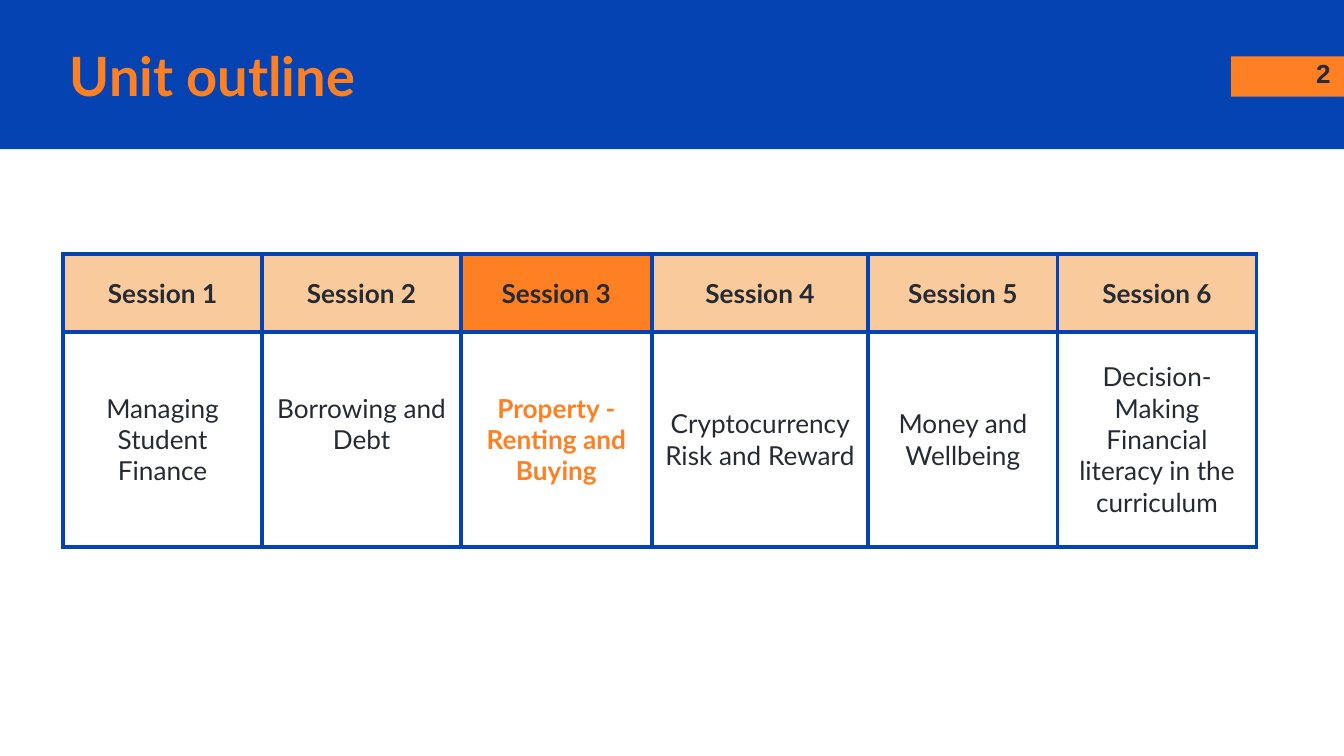
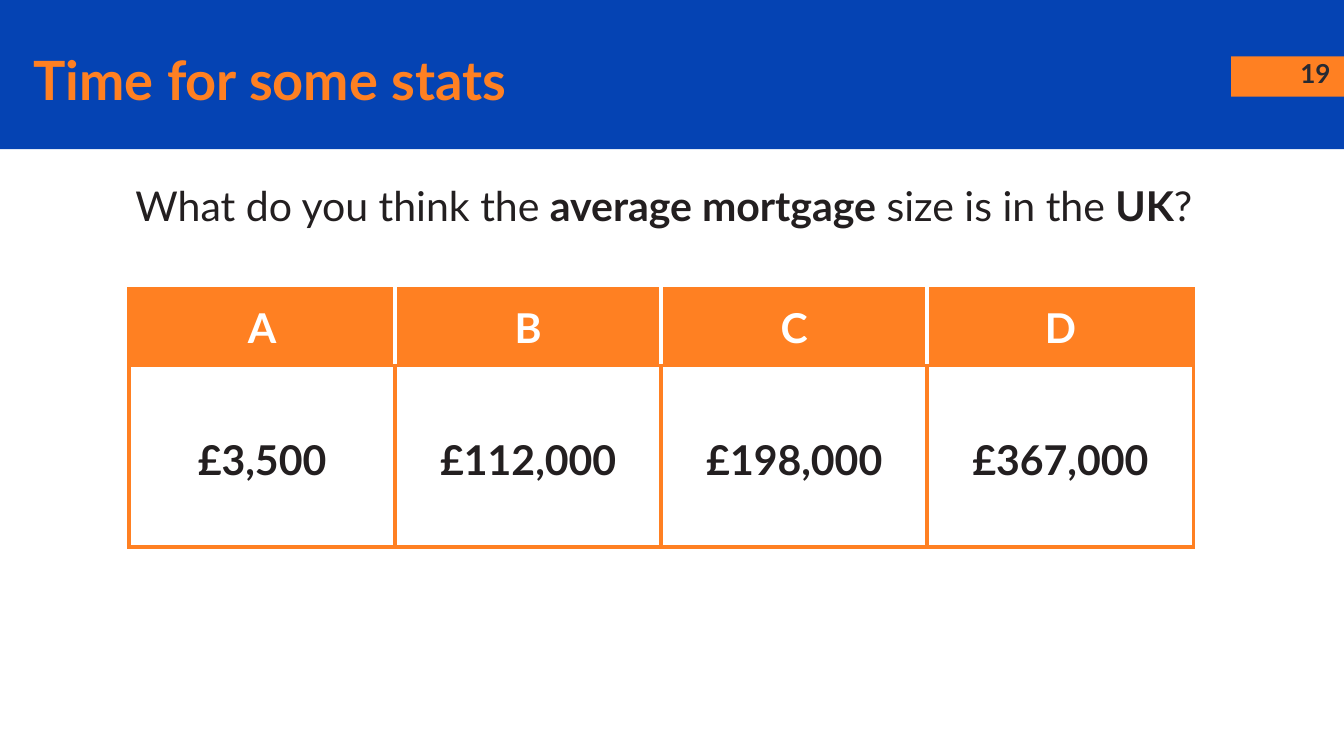
from dataclasses import dataclass

from lxml import etree
from pptx import Presentation
from pptx.dml.color import RGBColor
from pptx.enum.shapes import MSO_SHAPE
from pptx.enum.text import MSO_ANCHOR, MSO_AUTO_SIZE, PP_ALIGN
from pptx.oxml.ns import qn
from pptx.util import Inches, Pt

LEFT, CENTER, RIGHT = PP_ALIGN.LEFT, PP_ALIGN.CENTER, PP_ALIGN.RIGHT
TOP, MIDDLE = MSO_ANCHOR.TOP, MSO_ANCHOR.MIDDLE
RECT = MSO_SHAPE.RECTANGLE
TITLE_ONLY = 5


@dataclass(frozen=True)
class Theme:
    blue: str = "0543B3"
    orange: str = "FF8022"
    peach: str = "F9CB9C"
    white: str = "FFFFFF"
    dark: str = "262A33"
    ink: str = "231F20"
    font: str = "Lato"
    number_font: str = "Arial"
    title: int = 29
    large: int = 22
    body: int = 14
    border: float = 2.25
    inset: float = 0.1
    side_inset: float = 0.09


T = Theme()
WIDTH = 10
HEIGHT = WIDTH * 9 / 16

SESSIONS = [
    ("Session 1", ["Managing Student Finance"]),
    ("Session 2", ["Borrowing and Debt"]),
    ("Session 3", ["Property - Renting and Buying"]),
    ("Session 4", ["Cryptocurrency Risk and Reward"]),
    ("Session 5", ["Money and Wellbeing"]),
    ("Session 6", ["Decision- Making", "Financial literacy in the curriculum"]),
]
SESSION_COLS = [1.48, 1.48, 1.42, 1.61, 1.41, 1.48]
SESSION_ROWS = [0.58, 1.6]
CURRENT, RAISED = 2, 1
RAISE = 0.23

# Each part of the question is (text, bold)
QUESTION = [
    ("What do you think the ", False),
    ("average mortgage", True),
    (" size is in the ", False),
    ("UK", True),
    ("?", False),
]
ANSWERS = [("A", "£3,500"), ("B", "£112,000"), ("C", "£198,000"), ("D", "£367,000")]
ANSWER_COL = 1.98
ANSWER_ROWS = [0.57, 1.35]


def write(tf, paragraphs, size=T.body, color=T.dark, font=T.font, bold=False,
          align=LEFT, spacing=None):
    """Fill a text frame; a paragraph is a string or a list of (text, bold) parts."""
    for i, content in enumerate(paragraphs):
        p = tf.paragraphs[0] if i == 0 else tf.add_paragraph()
        p.alignment = align
        if spacing:
            p.line_spacing = spacing
        parts = [(content, bold)] if isinstance(content, str) else content
        for text, is_bold in parts:
            r = p.add_run()
            r.text = text
            r.font.name, r.font.size, r.font.bold = font, Pt(size), is_bold
            r.font.color.rgb = RGBColor.from_string(color)


def frame(sp, anchor=TOP):
    tf = sp.text_frame
    tf.word_wrap = True
    tf.auto_size = MSO_AUTO_SIZE.NONE
    tf.vertical_anchor = anchor
    tf.margin_left = tf.margin_right = Inches(T.inset)
    tf.margin_top = tf.margin_bottom = Inches(T.inset)
    return tf


def add_text(s, box, paragraphs, **fmt):
    write(frame(s.shapes.add_textbox(*map(Inches, box))), paragraphs, **fmt)


def add_block(s, box, color):
    sp = s.shapes.add_shape(RECT, *map(Inches, box))
    sp.shadow.inherit = False
    sp.fill.solid()
    sp.fill.fore_color.rgb = RGBColor.from_string(color)
    sp.line.fill.background()


def add_slide(prs, title, title_box, number, number_font=T.font):
    s = prs.slides.add_slide(prs.slide_layouts[TITLE_ONLY])
    add_block(s, (0, 0, WIDTH, 1.11), T.blue)
    add_block(s, (9.16, 0.42, 0.84, 0.3), T.orange)
    add_text(s, (9.4, 0.33, 0.6, 0.43), [number], font=number_font, bold=True, align=RIGHT)
    sp = s.shapes.title
    sp.left, sp.top, sp.width, sp.height = map(Inches, title_box)
    write(frame(sp, MIDDLE), [title], size=T.title, color=T.orange, bold=True)
    s.shapes._spTree.append(sp._element)  # title in front of the band
    return s


def set_borders(cell, color, **sides):
    """Draw all four borders in one colour; sides such as L=... override it."""
    tc_pr = cell._tc.get_or_add_tcPr()
    for i, side in enumerate("LRTB"):
        ln = etree.Element(qn(f"a:ln{side}"), w=str(Pt(T.border)))
        fill = etree.SubElement(ln, qn("a:solidFill"))
        etree.SubElement(fill, qn("a:srgbClr"), val=sides.get(side, color))
        tc_pr.insert(i, ln)


def add_table(s, left, top, cols, rows):
    table = s.shapes.add_table(len(rows), len(cols), Inches(left), Inches(top),
                               Inches(sum(cols)), Inches(sum(rows))).table
    table.first_row = table.horz_banding = False
    for col, width in zip(table.columns, cols):
        col.width = Inches(width)
    for row, height in zip(table.rows, rows):
        row.height = Inches(height)
    return table


def fill_cell(cell, paragraphs, fill, **fmt):
    cell.fill.solid()
    cell.fill.fore_color.rgb = RGBColor.from_string(fill)
    cell.vertical_anchor = MIDDLE
    cell.margin_left = cell.margin_right = Inches(T.side_inset)
    cell.margin_top = cell.margin_bottom = Inches(T.inset)
    write(cell.text_frame, paragraphs, align=CENTER, **fmt)


def build_outline(prs):
    s = add_slide(prs, "Unit outline", (0.42, 0.28, 8.46, 0.56), "2", T.number_font)
    table = add_table(s, 0.47, 1.89, SESSION_COLS, SESSION_ROWS)
    for c, (session, topic) in enumerate(SESSIONS):
        current = c == CURRENT
        head, body = table.cell(0, c), table.cell(1, c)
        fill_cell(head, [session], T.orange if current else T.peach, bold=True)
        fill_cell(body, topic, T.white, bold=current,
                  color=T.orange if current else T.dark)
        for cell in (head, body):
            set_borders(cell, T.blue)
    table.cell(1, RAISED).margin_bottom = Inches(T.inset + RAISE)


def build_stats(prs):
    s = add_slide(prs, "Time for some stats", (0.15, 0.31, 9.38, 0.56), "19")
    add_text(s, (0.91, 1.24, 8.46, 0.57), [QUESTION], size=T.large, color=T.ink)
    table = add_table(s, 0.96, 2.15, [ANSWER_COL] * len(ANSWERS), ANSWER_ROWS)
    last = len(ANSWERS) - 1
    for c, (letter, amount) in enumerate(ANSWERS):
        head, body = table.cell(0, c), table.cell(1, c)
        fill_cell(head, [letter], T.orange, size=T.large, color=T.white, bold=True)
        fill_cell(body, [amount], T.white, size=T.large, color=T.ink, bold=True,
                  spacing=1.15)
        set_borders(head, T.orange, L=T.white if c else T.orange,
                    R=T.white if c < last else T.orange)
        set_borders(body, T.orange)


def main():
    prs = Presentation()
    prs.slide_width, prs.slide_height = Inches(WIDTH), Inches(HEIGHT)
    build_outline(prs)
    build_stats(prs)
    prs.save("out.pptx")


if __name__ == "__main__":
    main()
